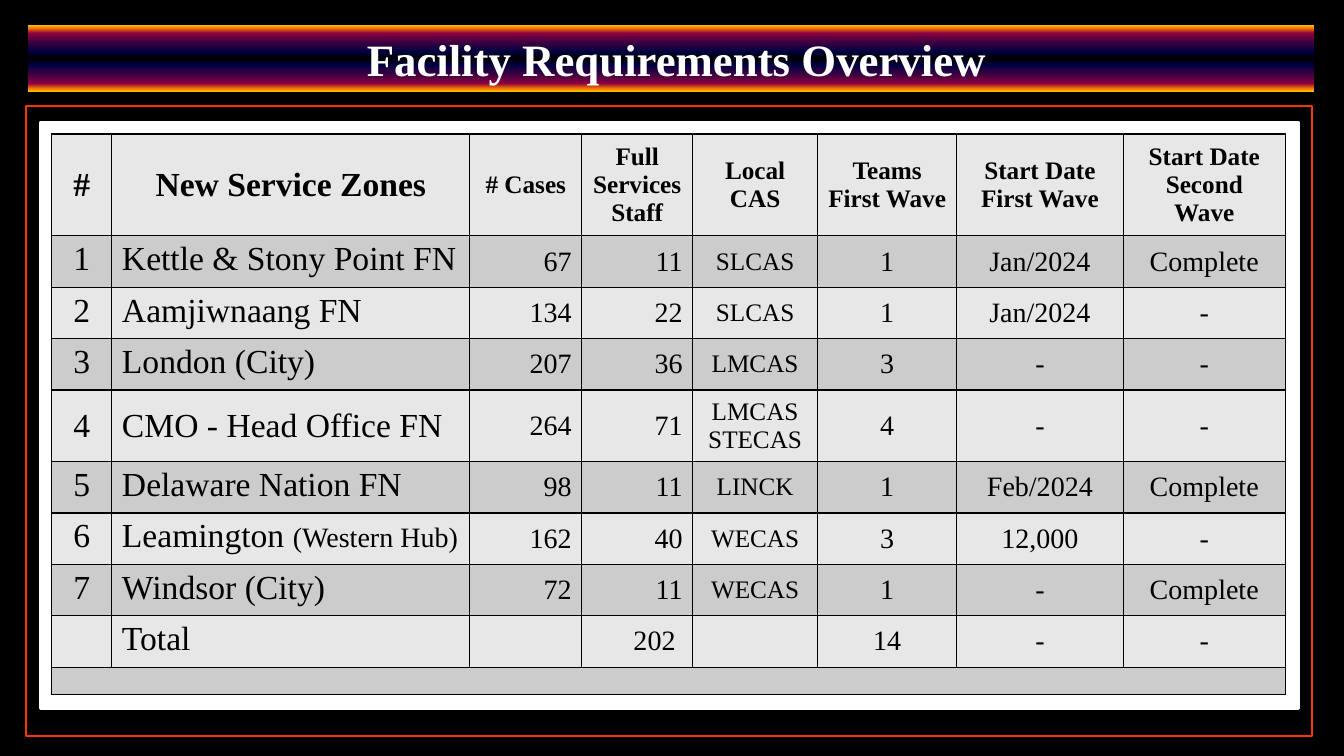
import pptx
import pptx.dml.color
import pptx.enum.shapes
import pptx.enum.text
import pptx.oxml
import pptx.util
from pptx.oxml.ns import nsdecls, qn

Inches = pptx.util.Inches
Pt = pptx.util.Pt
RGBColor = pptx.dml.color.RGBColor
Align = pptx.enum.text.PP_ALIGN
Anchor = pptx.enum.text.MSO_ANCHOR

BLACK = RGBColor(0x00, 0x00, 0x00)
WHITE = RGBColor(0xFF, 0xFF, 0xFF)
ORANGE = RGBColor(0xFF, 0x33, 0x00)
LIGHT_GREY = RGBColor(0xE7, 0xE7, 0xE7)
MID_GREY = RGBColor(0xCC, 0xCC, 0xCC)
FONT = "Times New Roman"

TITLE = " Facility Requirements Overview"
# First half of the banner gradient, mirrored for the second half: percent, colour
BANNER_STOPS = [(0, "FFBF00"), (5, "F27300"), (12, "8F0040"),
                (25, "400040"), (40, "000040"), (50, "000000")]

HEADINGS = ["#", "New Service Zones", "# Cases", "Full Services\nStaff", "Local CAS",
            "Teams\nFirst Wave", "Start Date\nFirst Wave", "Start Date\nSecond Wave"]
ZONES = [
    ["1", "Kettle & Stony Point FN", "67", "11", "SLCAS", "1", "Jan/2024", "Complete"],
    ["2", "Aamjiwnaang FN", "134", "22", "SLCAS", "1", "Jan/2024", "-"],
    ["3", "London (City)", "207", "36", "LMCAS", "3", "-", "-"],
    ["4", "CMO - Head Office FN", "264", "71", "LMCAS\nSTECAS", "4", "-", "-"],
    ["5", "Delaware Nation FN", "98", "11", "LINCK", "1", "Feb/2024", "Complete"],
    ["6", "Leamington ", "162", "40", "WECAS", "3", "12,000", "-"],
    ["7", "Windsor (City)", "72", "11", "WECAS", "1", "-", "Complete"],
    ["", "Total", "", "202 ", "", "14", "-", "-"],
]
ZONE_NOTES = {"Leamington ": "(Western Hub)"}
FOOTER = [""] * len(HEADINGS)

# Width, heading size, body size, body alignment
COLUMNS = [
    (0.60, 24, 24, Align.CENTER),
    (3.55, 24, 24, Align.LEFT),
    (1.11, 18, 20, Align.RIGHT),
    (1.10, 18, 20, Align.RIGHT),
    (1.24, 18, 18, Align.CENTER),
    (1.38, 18, 20, Align.CENTER),
    (1.65, 18, 20, Align.CENTER),
    (1.61, 18, 20, Align.CENTER),
]
HEADING_HEIGHT, ROW_HEIGHT, TWO_LINE_HEIGHT, FOOTER_HEIGHT = 1.01, 0.51, 0.71, 0.27
FOOTER_SIZE = 8


def add_box(page, left, top, width, height, line=None, line_width=1.0):
    box = page.shapes.add_shape(pptx.enum.shapes.MSO_SHAPE.RECTANGLE, Inches(left),
                                Inches(top), Inches(width), Inches(height))
    box.shadow.inherit = False
    box.fill.background()
    if line is None:
        box.line.fill.background()
    else:
        box.line.color.rgb = line
        box.line.width = Pt(line_width)
    return box


def style(font, size, color, bold):
    font.name = FONT
    font.size = Pt(size)
    font.color.rgb = color
    font.bold = bold


def fill_banner(banner):
    """Give the banner its mirrored vertical gradient."""
    banner.fill.gradient()
    banner.fill.gradient_angle = 270
    mirrored = [(100 - percent, color) for percent, color in BANNER_STOPS[-2::-1]]
    stops = "".join(f'<a:gs pos="{percent * 1000}"><a:srgbClr val="{color}"/></a:gs>'
                    for percent, color in BANNER_STOPS + mirrored)
    old = banner.fill._fill._gradFill.find(qn("a:gsLst"))
    new = pptx.oxml.parse_xml(f'<a:gsLst {nsdecls("a")}>{stops}</a:gsLst>')
    old.getparent().replace(old, new)


def add_borders(cell):
    properties = cell._tc.get_or_add_tcPr()
    for side in ("lnL", "lnR", "lnT", "lnB"):
        properties.append(pptx.oxml.parse_xml(
            f'<a:{side} {nsdecls("a")} w="{Pt(1)}"><a:solidFill>'
            f'<a:srgbClr val="{BLACK}"/></a:solidFill></a:{side}>'))


def fill_cell(cell, text, size, align, bold, color):
    add_borders(cell)
    cell.fill.solid()
    cell.fill.fore_color.rgb = color
    cell.text_frame.text = text
    for para in cell.text_frame.paragraphs:
        para.alignment = align
        style(para.font, size, BLACK, bold)
        if not text:
            para._p.append(pptx.oxml.parse_xml(
                f'<a:endParaRPr {nsdecls("a")} sz="{size * 100}"/>'))
    if text in ZONE_NOTES:
        note = para.add_run()
        note.text = ZONE_NOTES[text]
        note.font.size = Pt(20)


def add_zone_table(page):
    rows = [HEADINGS] + ZONES + [FOOTER]
    last = len(rows) - 1
    heights = [TWO_LINE_HEIGHT if "\n" in zone[4] else ROW_HEIGHT for zone in ZONES]
    heights = [HEADING_HEIGHT] + heights + [FOOTER_HEIGHT]
    widths = [column[0] for column in COLUMNS]
    table = page.shapes.add_table(len(rows), len(COLUMNS), Inches(0.51), Inches(1.33),
                                  Inches(sum(widths)), Inches(sum(heights))).table
    for column, width in zip(table.columns, widths):
        column.width = Inches(width)
    for r, (texts, height) in enumerate(zip(rows, heights)):
        table.rows[r].height = Inches(height)
        for c, (text, column) in enumerate(zip(texts, COLUMNS)):
            _, heading_size, body_size, align = column
            cell = table.cell(r, c)
            if r == 0:
                size, align = heading_size, Align.CENTER
            else:
                size = FOOTER_SIZE if r == last else body_size
            fill_cell(cell, text, size, align, r == 0, MID_GREY if r % 2 else LIGHT_GREY)
            top_aligned = c < 2 and height == ROW_HEIGHT
            cell.vertical_anchor = Anchor.TOP if top_aligned else Anchor.MIDDLE
    table.cell(last, 0).merge(table.cell(last, len(COLUMNS) - 1))


def main():
    deck = pptx.Presentation()
    deck.slide_width, deck.slide_height = Inches(13.33), Inches(7.5)
    page = deck.slides.add_slide(deck.slide_layouts[6])
    page.background.fill.solid()
    page.background.fill.fore_color.rgb = BLACK

    panel = add_box(page, 0.4, 1.22, 12.48, 5.81, WHITE, 2.5)
    panel.fill.solid()
    panel.fill.fore_color.rgb = WHITE
    add_box(page, 0.26, 1.05, 12.75, 6.25, ORANGE, 1.5)

    banner = add_box(page, 0.28, 0.25, 12.75, 0.66)
    fill_banner(banner)
    banner.text_frame.vertical_anchor = Anchor.MIDDLE
    para = banner.text_frame.paragraphs[0]
    para.text = TITLE
    para.alignment = Align.CENTER
    style(para.font, 32, WHITE, True)

    add_zone_table(page)
    deck.save("out.pptx")


if __name__ == "__main__":
    main()
